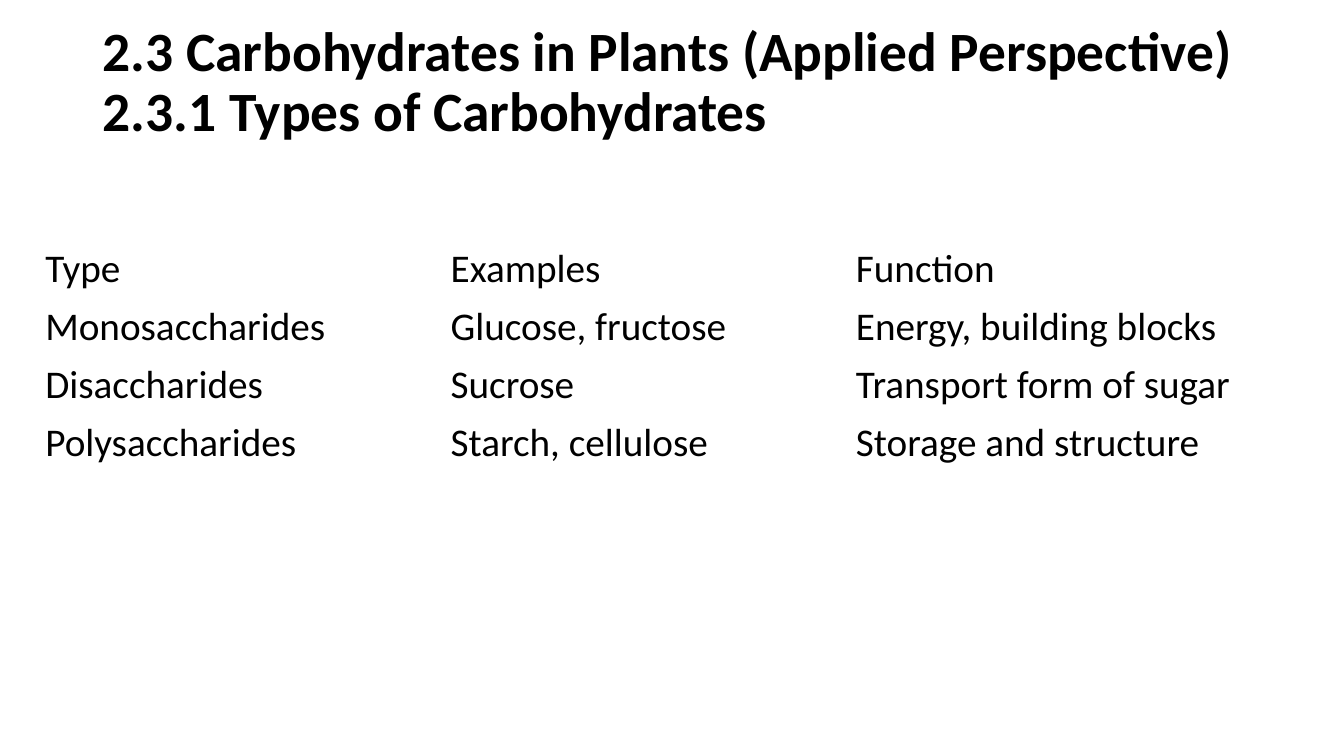
import pptx
import pptx.dml.color
import pptx.enum.text
import pptx.util
from dataclasses import dataclass

Inches = pptx.util.Inches
Pt = pptx.util.Pt

TITLE_LINES = [
    "2.3 Carbohydrates in Plants (Applied Perspective)",
    "2.3.1 Types of Carbohydrates",
]
CARBOHYDRATES = [
    ("Type", "Examples", "Function"),
    ("Monosaccharides", "Glucose, fructose", "Energy, building blocks"),
    ("Disaccharides", "Sucrose", "Transport form of sugar"),
    ("Polysaccharides", "Starch, cellulose", "Storage and structure"),
]
COLUMN_WIDTH = 4.02
ROW_HEIGHT = 0.57


@dataclass(frozen=True)
class Theme:
    font: str = "Calibri"
    ink: pptx.dml.color.RGBColor = pptx.dml.color.RGBColor(0, 0, 0)
    title_size: float = 39.6
    table_size: float = 28


THEME = Theme()


def add_text(paragraph, text, size, bold=False):
    run = paragraph.add_run()
    run.text = text
    run.font.name = THEME.font
    run.font.size = Pt(size)
    run.font.bold = bold
    run.font.color.rgb = THEME.ink


def fill_title(title):
    title.left, title.top = Inches(0.92), Inches(0.4)
    title.width, title.height = Inches(11.5), Inches(1.45)
    frame = title.text_frame
    frame.word_wrap = True
    frame.auto_size = pptx.enum.text.MSO_AUTO_SIZE.NONE
    frame.vertical_anchor = pptx.enum.text.MSO_ANCHOR.MIDDLE
    frame.margin_bottom = Inches(0.65)
    heading = frame.paragraphs[0]
    heading.alignment = pptx.enum.text.PP_ALIGN.LEFT
    heading.line_spacing = 0.9
    for index, line in enumerate(TITLE_LINES):
        if index:
            heading.add_line_break()
        add_text(heading, line, THEME.title_size, bold=True)


def add_carbohydrate_table(slide):
    row_count, column_count = len(CARBOHYDRATES), len(CARBOHYDRATES[0])
    table = slide.shapes.add_table(
        row_count, column_count, Inches(0.35), Inches(2.38),
        Inches(COLUMN_WIDTH * column_count), Inches(ROW_HEIGHT * row_count),
    ).table
    table.first_row = False
    table.horz_banding = False
    for row, entries in zip(table.rows, CARBOHYDRATES):
        for cell, entry in zip(row.cells, entries):
            cell.fill.background()
            cell.vertical_anchor = pptx.enum.text.MSO_ANCHOR.MIDDLE
            add_text(cell.text_frame.paragraphs[0], entry, THEME.table_size)


def main():
    deck = pptx.Presentation()
    deck.slide_width, deck.slide_height = Inches(13.33), Inches(7.5)
    slide = deck.slides.add_slide(deck.slide_layouts[5])
    fill_title(slide.shapes.title)
    add_carbohydrate_table(slide)
    deck.save("out.pptx")


if __name__ == "__main__":
    main()
